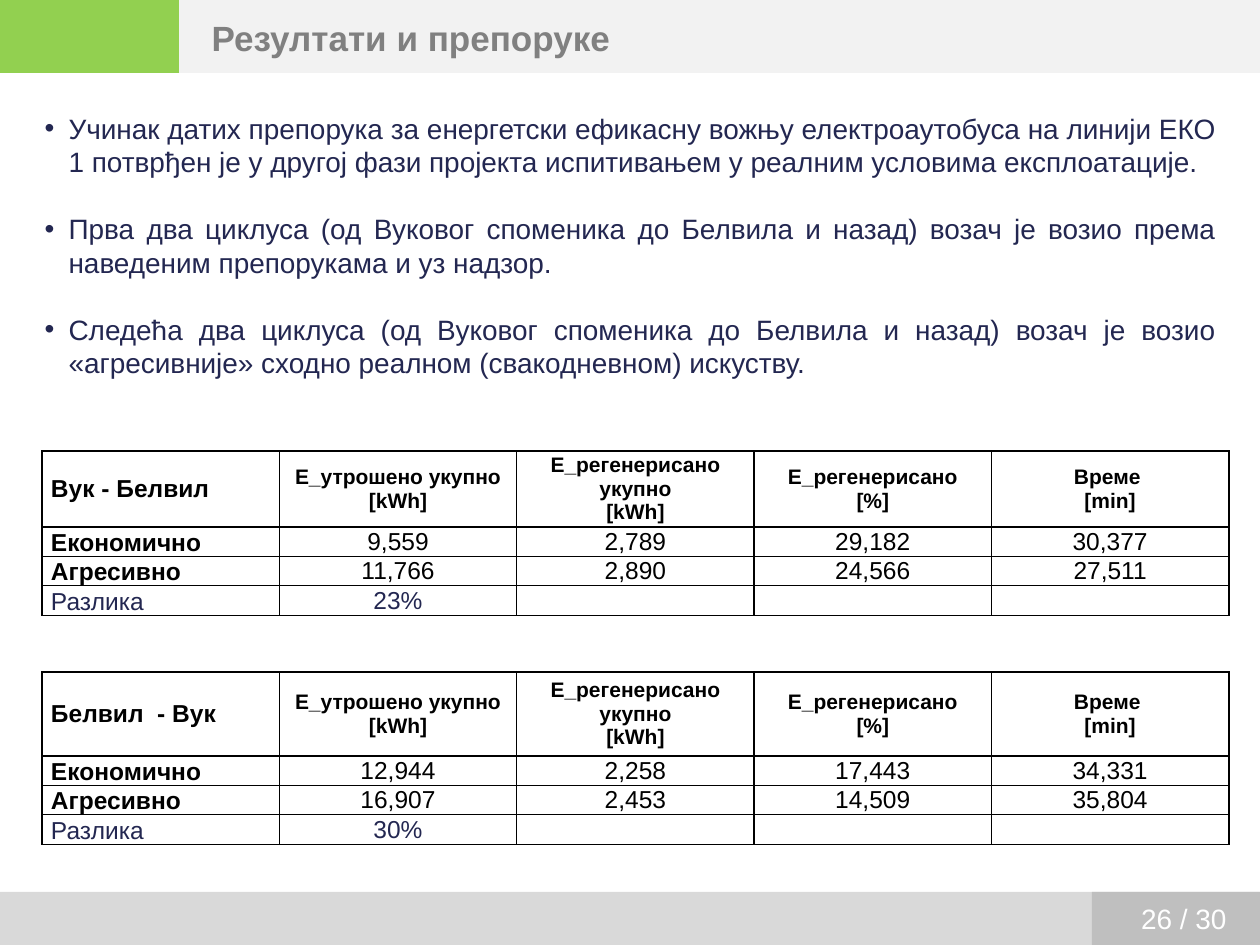
import pptx
import pptx.util
import pptx.dml.color
import pptx.enum.shapes
import pptx.enum.text
import pptx.oxml
import pptx.oxml.ns

SCALE = 914400 / 126
HUES = {
    "green": "92D050", "pale": "F2F2F2", "foot": "D9D9D9", "page": "BFBFBF",
    "white": "FFFFFF", "title": "808080", "navy": "232751", "black": "000000",
}
ALIGN = pptx.enum.text.PP_ALIGN
ANCHOR = pptx.enum.text.MSO_ANCHOR


def px(num):
    return round(num * SCALE)


class Deck:
    font = "Arial"

    def __init__(self, wide, high):
        self.prs = pptx.Presentation()
        self.prs.slide_width, self.prs.slide_height = px(wide), px(high)
        self.slide = self.prs.slides.add_slide(self.prs.slide_layouts[1])

    def hue(self, name):
        return pptx.dml.color.RGBColor.from_string(HUES[name])

    def place(self, shape, box):
        shape.left, shape.top, shape.width, shape.height = map(px, box)

    def run(self, para, text, size, hue, bold=False):
        run = para.add_run()
        run.text = text
        font = run.font
        font.name, font.size, font.bold = self.font, pptx.util.Pt(size), bold
        font.color.rgb = self.hue(hue)

    def bar(self, box, hue):
        kind = pptx.enum.shapes.MSO_SHAPE.RECTANGLE
        bar = self.slide.shapes.add_shape(kind, *map(px, box))
        bar.shadow.inherit = False
        bar.fill.solid()
        bar.fill.fore_color.rgb = self.hue(hue)
        bar.line.fill.background()

    def holder(self, index, box):
        shape = self.slide.placeholders[index]
        self.slide.shapes._spTree.append(shape._element)
        self.place(shape, box)
        frame = shape.text_frame
        frame.auto_size = pptx.enum.text.MSO_AUTO_SIZE.NONE
        frame.vertical_anchor = ANCHOR.TOP
        return frame

    def title(self, text, box):
        para = self.holder(0, box).paragraphs[0]
        para.alignment = ALIGN.LEFT
        self.run(para, text, 20, "title", True)

    def body(self, items, box):
        frame = self.holder(1, box)
        for i, item in enumerate(items):
            para = frame.add_paragraph() if i else frame.paragraphs[0]
            props = para._p.get_or_add_pPr()
            props.set("marL", str(px(24)))
            props.set("indent", str(px(-24)))
            mark = pptx.oxml.parse_xml(
                f'<a:buChar {pptx.oxml.ns.nsdecls("a")} char="•"/>')
            props.append(mark)
            para.alignment = ALIGN.JUSTIFY
            para.space_before = pptx.util.Pt(19 if i else 0)
            self.run(para, item, 16, "navy")

    def label(self, text, box):
        frame = self.slide.shapes.add_textbox(*map(px, box)).text_frame
        frame.word_wrap = True
        frame.vertical_anchor = ANCHOR.MIDDLE
        para = frame.paragraphs[0]
        para.alignment = ALIGN.RIGHT
        self.run(para, text, 16, "white")

    def edge(self, cell):
        props = cell._tc.get_or_add_tcPr()
        for i, side in enumerate("LRTB"):
            line = pptx.oxml.parse_xml(
                f'<a:ln{side} {pptx.oxml.ns.nsdecls("a")} w="12700"><a:solidFill>'
                f'<a:srgbClr val="{HUES["black"]}"/></a:solidFill></a:ln{side}>')
            props.insert(i, line)

    def cell(self, cell, text, row, col):
        cell.fill.background()
        self.edge(cell)
        cell.margin_left = cell.margin_right = px(9)
        cell.margin_top = cell.margin_bottom = 0
        cell.vertical_anchor = ANCHOR.BOTTOM if row and not col else ANCHOR.MIDDLE
        size = 12 if col and not row else 14
        hue = "navy" if row == 3 else "black"
        bold = row == 0 or (col == 0 and row < 3)
        for i, part in enumerate(text.split("\n")):
            para = cell.text_frame.add_paragraph() if i else cell.text_frame.paragraphs[0]
            para.alignment = ALIGN.CENTER if col else ALIGN.LEFT
            if part:
                self.run(para, part, size, hue, bold)
            else:
                para._p.append(pptx.oxml.parse_xml(
                    f'<a:endParaRPr {pptx.oxml.ns.nsdecls("a")} sz="{size * 100}"/>'))

    def table(self, rows, box, head):
        count, span = len(rows), len(rows[0])
        table = self.slide.shapes.add_table(count, span, *map(px, box)).table
        table.first_row = table.horz_banding = False
        for col in table.columns:
            col.width = px(box[2] / span)
        for i, row in enumerate(rows):
            table.rows[i].height = px((box[3] - head) / (count - 1) if i else head)
            for j, text in enumerate(row):
                self.cell(table.cell(i, j), text, i, j)


def grid(name, regen, eco, hard, diff):
    return [
        [name, "E_утрошено укупно\n[kWh]", regen + " укупно\n[kWh]",
         "E_регeнерисано\n[%]", "Време \n[min]"],
        ["Економично", *eco],
        ["Агресивно", *hard],
        ["Разлика", diff, "", "", ""],
    ]


def main():
    deck = Deck(1260, 945)
    deck.bar((179, 0, 1081, 73), "pale")
    deck.body([
        "Учинак датих препорука за енергетски ефикасну вожњу електроаутобуса на линији "
        "ЕКО 1 потврђен је у другој фази пројекта испитивањем у реалним условима "
        "експлоатације.",
        "Прва два циклуса (од Вуковог споменика до Белвила и назад) возач је возио "
        "према наведеним препорукама и уз надзор.",
        "Следећа два циклуса (од Вуковог споменика до Белвила и назад) возач је возио "
        "«агресивније» сходно реалном (свакодневном) искуству.",
    ], (32, 105, 1197, 420))
    deck.bar((0, 0, 179, 73), "green")
    deck.bar((0, 892, 1260, 53), "foot")
    deck.bar((1092, 892, 168, 53), "page")
    deck.label("26 / 30", (1092, 892, 147, 53))
    deck.title("Резултати и препоруке", (199, 10, 1061, 53))
    deck.table(grid(
        "Вук - Белвил", "E_регeнерисано",
        ("9,559", "2,789", "29,182", "30,377"),
        ("11,766", "2,890", "24,566", "27,511"), "23%",
    ), (42, 451, 1187, 164), 76)
    deck.table(grid(
        "Белвил  - Вук", "Е_регенерисано",
        ("12,944", "2,258", "17,443", "34,331"),
        ("16,907", "2,453", "14,509", "35,804"), "30%",
    ), (42, 672, 1187, 172), 84)
    deck.prs.save("out.pptx")


if __name__ == "__main__":
    main()
